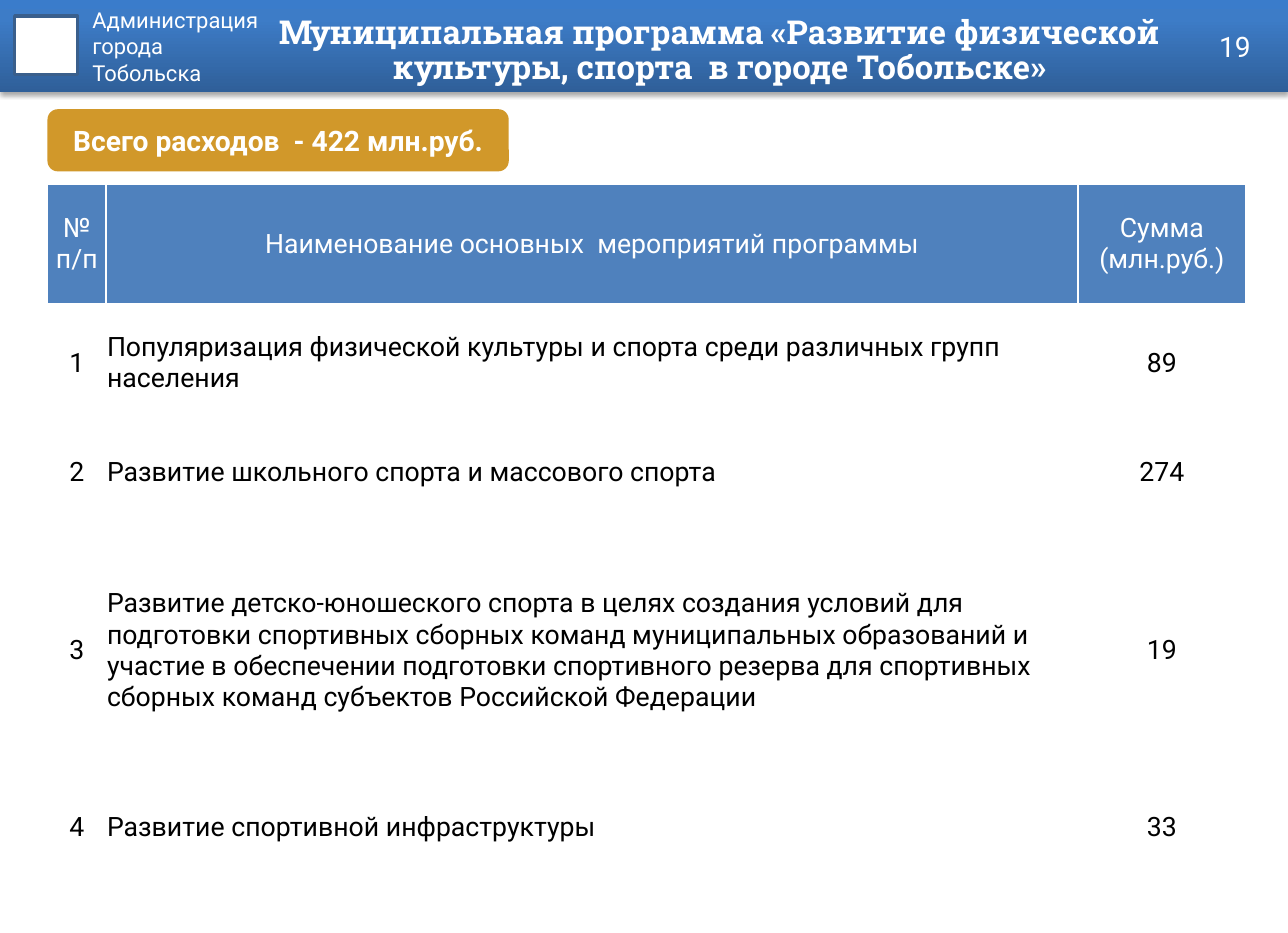
from copy import deepcopy

from lxml.etree import SubElement
from pptx import Presentation
from pptx.dml.color import RGBColor
from pptx.enum.shapes import MSO_SHAPE
from pptx.enum.text import MSO_ANCHOR, PP_ALIGN
from pptx.oxml.ns import qn
from pptx.util import Cm, Pt

WHITE, BLACK, BLUE, GOLD = "FFFFFF", "000000", "4F81BD", "D1982A"
LEFT, CENTER, RIGHT = PP_ALIGN.LEFT, PP_ALIGN.CENTER, PP_ALIGN.RIGHT
COLUMN_WIDTHS = [1.32, 21.89, 3.78]
ROW_HEIGHTS = [2.69, 2.67, 2.26, 5.77, 2.18]
HEADER = ["№\nп/п", "Наименование основных  мероприятий программы", "Сумма\n(млн.руб.)"]
MEASURES = [
    ("Популяризация физической культуры и спорта среди различных групп населения", 89),
    ("Развитие школьного спорта и массового спорта", 274),
    ("Развитие детско-юношеского спорта в целях создания условий для подготовки "
     "спортивных сборных команд муниципальных образований и участие в обеспечении "
     "подготовки спортивного резерва для спортивных сборных команд субъектов "
     "Российской Федерации", 19),
    ("Развитие спортивной инфраструктуры", 33),
]


def rgb(color):
    """Turn a hex string into a colour."""
    return RGBColor.from_string(color)


def write(tf, text, size, color=WHITE, align=LEFT, bold=False, font="Roboto", spacing=None):
    """Fill a text frame with evenly formatted paragraphs."""
    tf.word_wrap = True
    tf.text = text
    for p in tf.paragraphs:
        p.alignment = align
        p.line_spacing = spacing
        for r in p.runs:
            r.font.name, r.font.size, r.font.bold = font, Pt(size), bold
            r.font.color.rgb = rgb(color)


def add_text(s, x, y, w, h, text, size, anchor=MSO_ANCHOR.MIDDLE, **style):
    """Add a text box."""
    tf = s.shapes.add_textbox(Cm(x), Cm(y), Cm(w), Cm(h)).text_frame
    tf.margin_left = tf.margin_right = Cm(0.28)
    tf.margin_top = tf.margin_bottom = Cm(0.15)
    tf.vertical_anchor = anchor
    write(tf, text, size, **style)


def add_box(s, x, y, w, h, fill, kind=MSO_SHAPE.RECTANGLE):
    """Add a plain filled shape without outline or shadow."""
    sp = s.shapes.add_shape(kind, Cm(x), Cm(y), Cm(w), Cm(h))
    sp.shadow.inherit = False
    sp.fill.solid()
    sp.fill.fore_color.rgb = rgb(fill)
    sp.line.fill.background()
    return sp


def shade(sp, stops):
    """Give a shape a gradient that runs from bottom to top."""
    sp.fill.gradient()
    sp.fill.gradient_angle = 90
    gs_list = sp.element.spPr.find(".//" + qn("a:gsLst"))
    for _ in stops[2:]:
        gs_list.append(deepcopy(gs_list[-1]))
    for stop, (position, color) in zip(sp.fill.gradient_stops, stops):
        stop.position = position
        stop.color.rgb = rgb(color)


def cast_shadow(sp):
    """Drop a soft black shadow below a shape."""
    effects = sp.element.spPr.find(qn("a:effectLst"))
    shadow = SubElement(effects, qn("a:outerShdw"), blurRad=str(Pt(3.1)),
                        dist=str(Pt(1.8)), dir="5400000", rotWithShape="0")
    color = SubElement(shadow, qn("a:srgbClr"), val=BLACK)
    SubElement(color, qn("a:alpha"), val="35000")


def add_borders(cell):
    """Draw thin white lines on all sides of a cell."""
    tc_pr = cell._tc.get_or_add_tcPr()
    for i, side in enumerate(("a:lnL", "a:lnR", "a:lnT", "a:lnB")):
        ln = tc_pr.makeelement(qn(side), {"w": str(Pt(1))})
        fill = SubElement(ln, qn("a:solidFill"))
        SubElement(fill, qn("a:srgbClr"), val=WHITE)
        tc_pr.insert(i, ln)


def fill_cell(cell, text, color, align):
    """Write one table cell."""
    cell.margin_left = cell.margin_right = cell.margin_top = Cm(0.02)
    cell.margin_bottom = 0
    cell.vertical_anchor = MSO_ANCHOR.MIDDLE
    write(cell.text_frame, text, 17, color, align)
    add_borders(cell)


def add_measures(s):
    """Add the table of programme measures."""
    rows = [HEADER] + [[str(n), name, str(total)] for n, (name, total) in enumerate(MEASURES, 1)]
    table = s.shapes.add_table(len(rows), len(HEADER), Cm(1.07), Cm(4.14),
                               Cm(sum(COLUMN_WIDTHS)), Cm(sum(ROW_HEIGHTS))).table
    table.horz_banding = False
    for column, width in zip(table.columns, COLUMN_WIDTHS):
        column.width = Cm(width)
    for i, (height, row) in enumerate(zip(ROW_HEIGHTS, rows)):
        table.rows[i].height = Cm(height)
        for j, text in enumerate(row):
            cell = table.cell(i, j)
            if i == 0:
                cell.fill.solid()
                cell.fill.fore_color.rgb = rgb(BLUE)
            else:
                cell.fill.background()
            fill_cell(cell, text, BLACK if i else WHITE, LEFT if i and j == 1 else CENTER)


def add_header(s):
    """Add the top band with emblem frame, owner, title and page number."""
    band = add_box(s, 0, 0, 29.01, 2.08, BLUE)
    shade(band, [(0, "2F5F99"), (0.8, "3D7CC7"), (1, "3A7CCB")])
    cast_shadow(band)
    emblem = add_box(s, 0.33, 0.36, 1.42, 1.32, WHITE)
    emblem.line.color.rgb = rgb("3A5F8C")
    emblem.line.width = Pt(2)
    add_text(s, 1.8, 0, 6.81, 2.69, "Администрация\nгорода\nТобольска", 14, MSO_ANCHOR.TOP)
    add_text(s, 5.31, 0, 21.79, 2.31,
             "Муниципальная программа «Развитие физической культуры, спорта  в городе Тобольске»",
             21, align=CENTER, bold=True, font="Roboto Slab", spacing=0.9)
    add_text(s, 21.69, 0.48, 6.76, 1.12, "19", 18, align=RIGHT)


def main():
    """Build the slide."""
    prs = Presentation()
    prs.slide_width, prs.slide_height = Cm(29.01), Cm(21.01)
    s = prs.slides.add_slide(prs.slide_layouts[6])
    add_header(s)
    total = add_box(s, 1.07, 2.46, 10.39, 1.4, GOLD, MSO_SHAPE.ROUNDED_RECTANGLE)
    total.text_frame.vertical_anchor = MSO_ANCHOR.MIDDLE
    write(total.text_frame, "Всего расходов  - 422 млн.руб.", 18, align=CENTER, bold=True)
    add_measures(s)
    prs.save("out.pptx")


if __name__ == "__main__":
    main()
